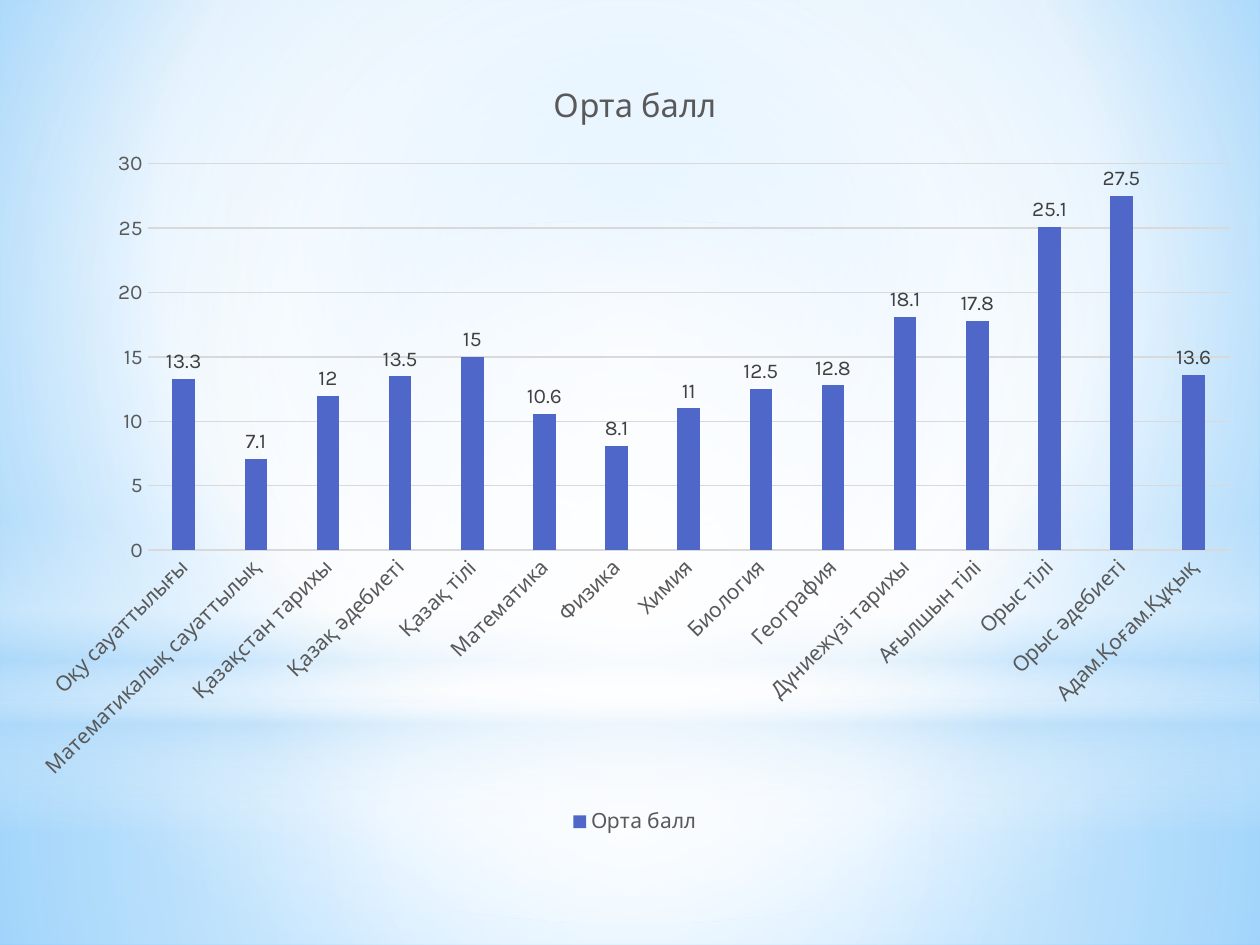
from lxml import etree
from pptx import Presentation
from pptx import util as u
from pptx.chart.data import CategoryChartData
from pptx.dml.color import RGBColor
from pptx.enum import chart as charts, shapes
from pptx.oxml.ns import qn

WIDTH, HEIGHT, HORIZON = 25.4, 19.05, 14.17
WHITE, SKY, GREY, RULE, BAR = "FFFFFF", "B4DCFA", "595959", "D9D9D9", "4E67C8"
CENTRE = (50, 50, 50, 50)

BACKGROUND = [(0, "9ED5FF", 100), (60, WHITE, 100), (100, "5BB9FF", 100)]
# preset, (left, top, width, height), stops of (position, colour, opacity), focus
GLOWS = [
    ("RECTANGLE", (0, HORIZON, WIDTH, HEIGHT - HORIZON),
     [(0, WHITE, 91), (37, WHITE, 76), (100, SKY, 79)], CENTRE),
    ("RECTANGLE", (0, 0, WIDTH, HORIZON),
     [(0, WHITE, 89), (48, WHITE, 62), (100, SKY, 79)], CENTRE),
    ("RECTANGLE", (0, 10.46, WIDTH, 6.35),
     [(0, WHITE, 0), (29, WHITE, 30), (45, SKY, 40),
      (55, WHITE, 26), (65, SKY, 60), (100, WHITE, 0)], None),
    ("OVAL", (0, 4.45, WIDTH, HORIZON),
     [(0, WHITE, 100), (56, WHITE, 0)], CENTRE),
]

SERIES_NAME = "Орта балл"
SCORES = {
    "Оқу сауаттылығы": 13.3,
    "Математикалық сауаттылық": 7.1,
    "Қазақстан тарихы": 12,
    "Қазақ әдебиеті": 13.5,
    "Қазақ тілі": 15,
    "Математика": 10.6,
    "Физика": 8.1,
    "Химия": 11,
    "Биология": 12.5,
    "География": 12.8,
    "Дүниежүзі тарихы": 18.1,
    "Ағылшын тілі": 17.8,
    "Орыс тілі": 25.1,
    "Орыс әдебиеті": 27.5,
    "Адам.Қоғам.Құқық": 13.6,
}


def colour(value):
    return RGBColor.from_string(value)


def assign(target, values):
    for name, value in values.items():
        setattr(target, name, value)


def style_font(font, size, value=GREY):
    assign(font, {"name": "Karla", "size": u.Pt(size), "bold": False})
    font.color.rgb = colour(value)


def style_line(line, value):
    line.color.rgb = colour(value)
    line.width = u.Pt(0.75)


def apply_gradient(fill, properties, stops, focus=None):
    """Fill with a circular gradient around focus, or a vertical one without it."""
    fill.solid()
    gradient = etree.Element(qn("a:gradFill"), rotWithShape="1")
    stop_list = etree.SubElement(gradient, qn("a:gsLst"))
    for position, value, opacity in stops:
        stop = etree.SubElement(stop_list, qn("a:gs"), pos=str(position * 1000))
        tint = etree.SubElement(stop, qn("a:srgbClr"), val=value)
        if opacity < 100:
            etree.SubElement(tint, qn("a:alpha"), val=str(opacity * 1000))
    if focus:
        circle = etree.SubElement(gradient, qn("a:path"), path="circle")
        edges = {side: str(part * 1000) for side, part in zip("ltrb", focus)}
        etree.SubElement(circle, qn("a:fillToRect"), **edges)
    else:
        etree.SubElement(gradient, qn("a:lin"), ang="5400000", scaled="0")
    properties.replace(properties.find(qn("a:solidFill")), gradient)


def paint_background(page):
    fill = page.background.fill
    fill.solid()
    properties = page.element.find(".//" + qn("p:bgPr"))
    apply_gradient(fill, properties, BACKGROUND, (20, 10, 20, 60))


def add_glow(page, preset, bounds, stops, focus):
    glow = page.shapes.add_shape(
        getattr(shapes.MSO_SHAPE, preset), *map(u.Cm, bounds))
    glow.shadow.inherit = False
    glow.line.fill.background()
    apply_gradient(glow.fill, glow.element.spPr, stops, focus)


def style_axes(chart):
    for axis in (chart.category_axis, chart.value_axis):
        assign(axis, {"major_tick_mark": charts.XL_TICK_MARK.NONE,
                      "minor_tick_mark": charts.XL_TICK_MARK.NONE})
        style_font(axis.tick_labels.font, 12)
    categories, values = chart.category_axis, chart.value_axis
    style_line(categories.format.line, RULE)
    body = categories.tick_labels.font and categories._element.find(
        qn("c:txPr")).find(qn("a:bodyPr"))
    body.set("rot", "-2700000")
    assign(values, {"minimum_scale": 0, "maximum_scale": 30, "major_unit": 5,
                    "has_major_gridlines": True})
    values.format.line.fill.background()
    style_line(values.major_gridlines.format.line, RULE)


def style_bars(plot):
    assign(plot, {"gap_width": 219, "overlap": -27,
                  "vary_by_categories": False, "has_data_labels": True})
    assign(plot.data_labels, {"show_value": True,
                              "position": charts.XL_LABEL_POSITION.OUTSIDE_END})
    style_font(plot.data_labels.font, 12, "404040")
    fill = plot.series[0].format.fill
    fill.solid()
    fill.fore_color.rgb = colour(BAR)


def add_score_chart(page):
    data = CategoryChartData()
    data.categories = list(SCORES)
    data.add_series(SERIES_NAME, list(SCORES.values()))
    chart = page.shapes.add_chart(
        charts.XL_CHART_TYPE.COLUMN_CLUSTERED,
        u.Cm(0.3), u.Cm(1.12), u.Cm(24.99), u.Cm(15.8), data).chart
    style_font(chart.font, 10, "000000")
    assign(chart, {"has_title": True, "has_legend": True})
    title = chart.chart_title.text_frame
    title.text = SERIES_NAME
    style_font(title.paragraphs[0].runs[0].font, 18.6)
    assign(chart.legend, {"position": charts.XL_LEGEND_POSITION.BOTTOM,
                          "include_in_layout": False})
    style_font(chart.legend.font, 12)
    style_axes(chart)
    style_bars(chart.plots[0])


def main():
    deck = Presentation()
    assign(deck, {"slide_width": u.Cm(WIDTH), "slide_height": u.Cm(HEIGHT)})
    page = deck.slides.add_slide(deck.slide_layouts[6])
    paint_background(page)
    for glow in GLOWS:
        add_glow(page, *glow)
    add_score_chart(page)
    deck.save("out.pptx")


if __name__ == "__main__":
    main()
